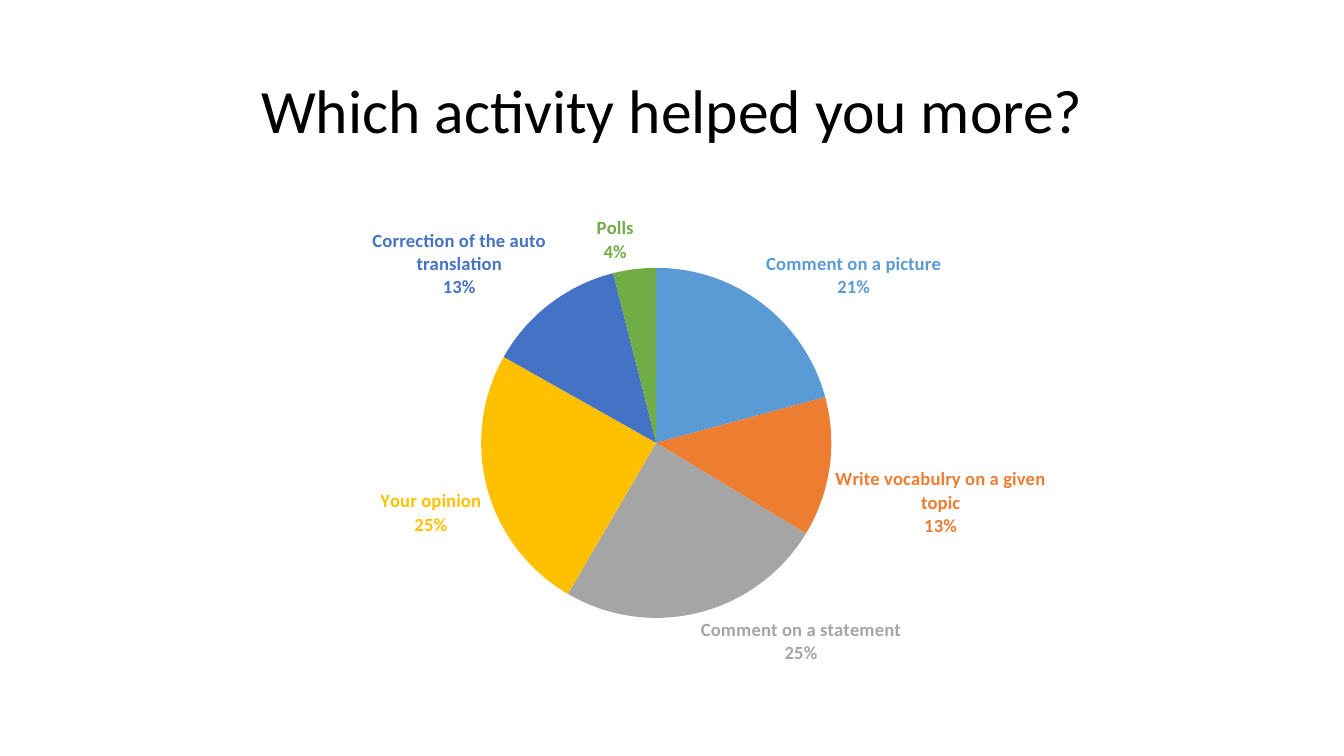
from lxml.etree import SubElement
from pptx import Presentation
from pptx.chart.data import CategoryChartData
from pptx.dml.color import RGBColor
from pptx.enum.chart import XL_CHART_TYPE as ChartType, XL_LABEL_POSITION as LabelPosition
from pptx.enum.text import MSO_ANCHOR as Anchor, PP_ALIGN as Align
from pptx.oxml import parse_xml
from pptx.oxml.ns import nsdecls, qn
from pptx.util import Inches, Pt

BLACK = RGBColor(0x00, 0x00, 0x00)
BLUE = RGBColor(0x5B, 0x9B, 0xD5)
ORANGE = RGBColor(0xED, 0x7D, 0x31)
GRAY = RGBColor(0xA5, 0xA5, 0xA5)
GOLD = RGBColor(0xFF, 0xC0, 0x00)
INDIGO = RGBColor(0x44, 0x72, 0xC4)
GREEN = RGBColor(0x70, 0xAD, 0x47)

FONT = "Calibri"
QUESTION = "Which activity helped you more?"
ACTIVITIES = [
    ("Comment on a picture", 21, BLUE),
    ("Write vocabulry on a given topic", 13, ORANGE),
    ("Comment on a statement", 25, GRAY),
    ("Your opinion", 25, GOLD),
    ("Correction of the auto translation", 13, INDIGO),
    ("Polls", 4, GREEN),
]
PIE_AREA = {"x": 0.335, "y": 0.138, "w": 0.302, "h": 0.73}
LABEL_PARTS = {"showVal": "0", "showCatName": "1", "showPercent": "1"}


def set_font(font, color, **formats):
    font.color.rgb = color
    for attribute, setting in {"name": FONT, **formats}.items():
        setattr(font, attribute, setting)


def add_question(slide, left, top, width, height):
    question = slide.shapes.title
    box = {"left": left, "top": top, "width": width, "height": height}
    for side, length in box.items():
        setattr(question, side, Inches(length))
    question.text_frame.text = QUESTION
    question.text_frame.vertical_anchor = Anchor.MIDDLE
    paragraph = question.text_frame.paragraphs[0]
    paragraph.alignment = Align.CENTER
    paragraph.line_spacing = 0.9
    set_font(paragraph.runs[0].font, BLACK, size=Pt(44))


def place_pie(chart):
    plot_area = chart.element.find(".//" + qn("c:plotArea"))
    for automatic_layout in plot_area.findall(qn("c:layout")):
        plot_area.remove(automatic_layout)
    layout = parse_xml(f"<c:layout {nsdecls('c')}><c:manualLayout/></c:layout>")
    settings = {"layoutTarget": "inner", "xMode": "edge", "yMode": "edge", **PIE_AREA}
    for tag, setting in settings.items():
        SubElement(layout[0], qn(f"c:{tag}")).set("val", str(setting))
    plot_area.insert(0, layout)


def show_names_and_shares(chart):
    for tag, shown in LABEL_PARTS.items():
        for part in chart.element.iter(qn(f"c:{tag}")):
            part.set("val", shown)
    for bubble_size in list(chart.element.iter(qn("c:showBubbleSize"))):
        separator = parse_xml(f"<c:separator {nsdecls('c')}>\n</c:separator>")
        bubble_size.addnext(separator)


def add_activity_pie(slide, left, top, width, height):
    votes = CategoryChartData()
    votes.categories = [activity for activity, share, color in ACTIVITIES]
    votes.add_series("Series 1", [share for activity, share, color in ACTIVITIES])
    box = [Inches(length) for length in (left, top, width, height)]
    chart = slide.shapes.add_chart(ChartType.PIE, *box, votes).chart
    chart.has_title = False
    chart.has_legend = False
    set_font(chart.font, BLACK, size=Pt(10))
    chart.plots[0].vary_by_categories = True
    shares = chart.plots[0].series[0]
    shares.data_labels.position = LabelPosition.OUTSIDE_END
    shares.data_labels.show_percentage = True
    for index, (activity, share, color) in enumerate(ACTIVITIES):
        activity_slice = shares.points[index]
        activity_slice.format.fill.solid()
        activity_slice.format.fill.fore_color.rgb = color
        activity_slice.format.line.fill.background()
        label = activity_slice.data_label
        set_font(label.font, color, size=Pt(13.3), bold=True)
        label.position = LabelPosition.OUTSIDE_END
    show_names_and_shares(chart)
    place_pie(chart)


def main():
    deck = Presentation()
    deck.slide_width, deck.slide_height = Inches(13.33), Inches(7.5)
    slide = deck.slides.add_slide(deck.slide_layouts[5])
    add_question(slide, 0.92, 0.4, 11.5, 1.45)
    add_activity_pie(slide, 0.92, 2, 11.5, 4.76)
    deck.save("out.pptx")


if __name__ == "__main__":
    main()
